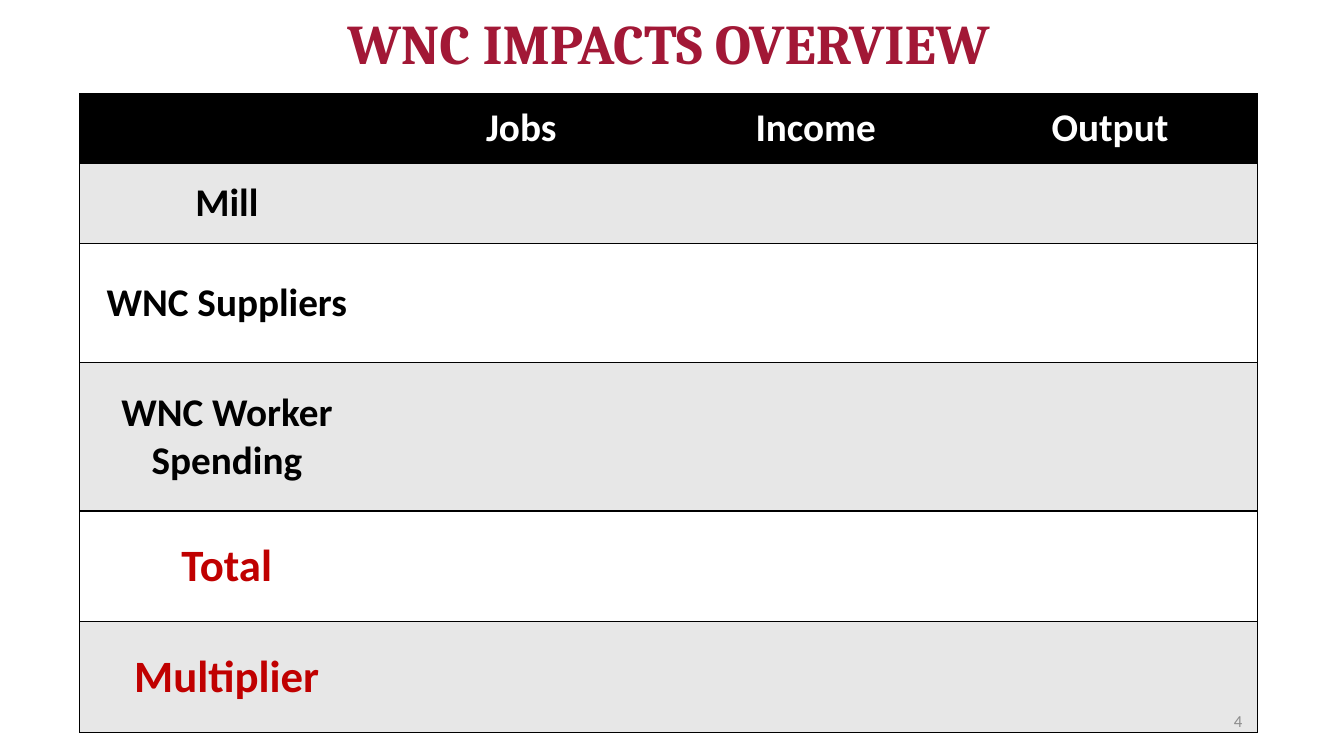
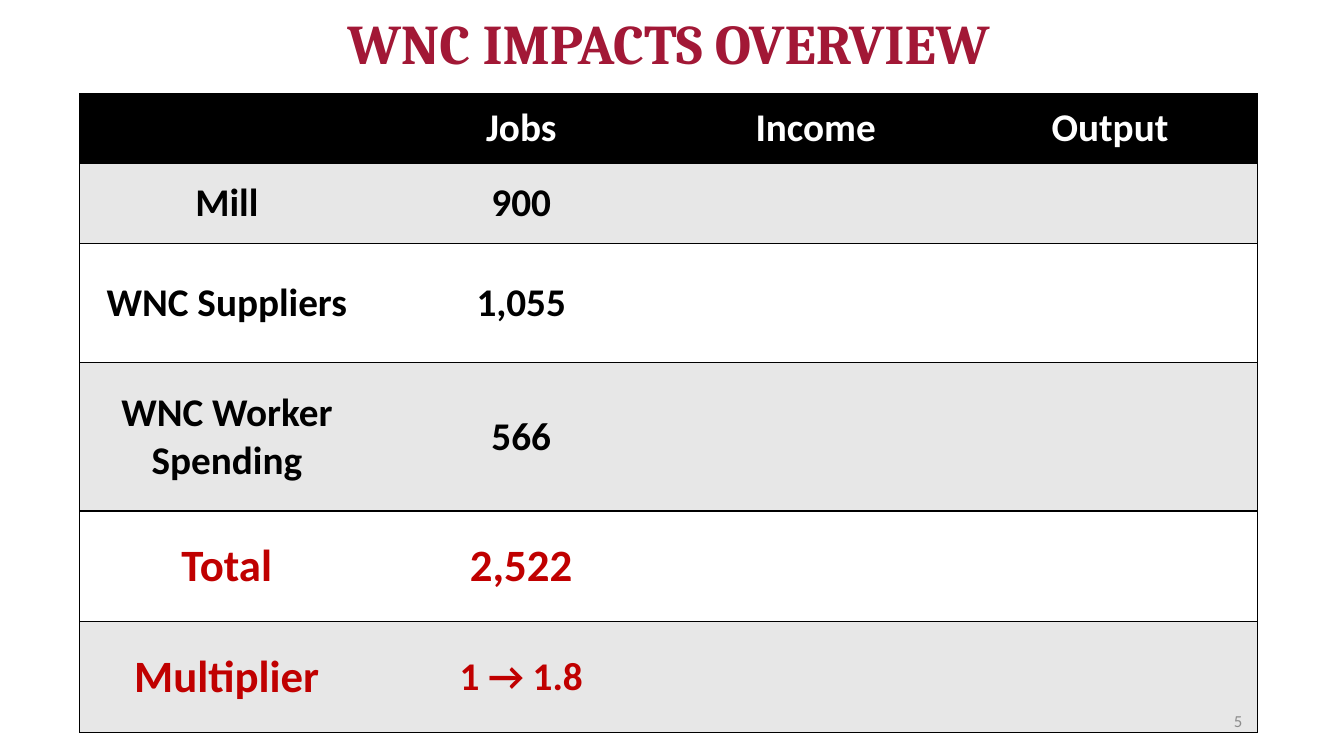
"""Build two slides that reveal a regional impact table step by step."""
from lxml import etree
from pptx import Presentation
from pptx.dml.color import RGBColor
from pptx.enum.text import MSO_ANCHOR, PP_ALIGN
from pptx.oxml.ns import qn

PX = 9144
CENTER, RIGHT = PP_ALIGN.CENTER, PP_ALIGN.RIGHT
TOP, MIDDLE = MSO_ANCHOR.TOP, MSO_ANCHOR.MIDDLE

COLORS = {
    "title": "A21836",
    "header": "000000",
    "header_text": "FFFFFF",
    "band": "E7E7E7",
    "plain": "FFFFFF",
    "text": "000000",
    "accent": "C00000",
    "border": "000000",
    "number": "8C8C8C",
}
BODY_FONT, TITLE_FONT = "Calibri", "Cambria"
TITLE = "WNC IMPACTS OVERVIEW"
HEADERS = ["", "Jobs", "Income", "Output"]
LABELS = ["Mill", "WNC Suppliers", "WNC Worker\nSpending", "Total", "Multiplier"]
JOBS = ["900", "1,055", "566", "2,522", "1 → 1.8"]
SUMMARY_LABELS = {"Total", "Multiplier"}
ROW_HEIGHTS = [69, 80, 118, 147, 110, 110]
COL_WIDTH = 292


def write_text(tf, text, size=28, color="text", font=BODY_FONT, bold=True, align=CENTER):
    p = tf.paragraphs[0]
    p.alignment = align
    for i, line in enumerate(text.split("\n")):
        if i:
            p.add_line_break()
        r = p.add_run()
        r.text = line
        r.font.name = font
        r.font.size = size * 12700
        r.font.bold = bold
        r.font.color.rgb = RGBColor.from_string(COLORS[color])


def add_text(slide, x, y, w, h, text, anchor=TOP, **fmt):
    tf = slide.shapes.add_textbox(x * PX, y * PX, w * PX, h * PX).text_frame
    tf.word_wrap = True
    tf.vertical_anchor = anchor
    write_text(tf, text, **fmt)


def set_borders(cell, visible):
    tc_pr = cell._tc.get_or_add_tcPr()
    for side in "LRTB":
        ln = etree.SubElement(tc_pr, qn(f"a:ln{side}"), w="12700")
        if side in visible:
            fill = etree.SubElement(ln, qn("a:solidFill"))
            etree.SubElement(fill, qn("a:srgbClr"), val=COLORS["border"])
        else:
            etree.SubElement(ln, qn("a:noFill"))


def format_cell(cell, text, fill, borders, **fmt):
    set_borders(cell, borders)
    cell.fill.solid()
    cell.fill.fore_color.rgb = RGBColor.from_string(COLORS[fill])
    cell.vertical_anchor = MIDDLE
    if text:
        write_text(cell.text_frame, text, **fmt)


def add_impact_table(slide, jobs):
    rows = [HEADERS] + [[label, job, "", ""] for label, job in zip(LABELS, jobs)]
    n_cols = len(HEADERS)
    table = slide.shapes.add_table(
        len(rows), n_cols, 79 * PX, 93 * PX,
        n_cols * COL_WIDTH * PX, sum(ROW_HEIGHTS) * PX).table
    table.horz_banding = False
    for col in table.columns:
        col.width = COL_WIDTH * PX
    for i, values in enumerate(rows):
        table.rows[i].height = ROW_HEIGHTS[i] * PX
        summary = values[0] in SUMMARY_LABELS
        if i == 0:
            fill, color = "header", "header_text"
        else:
            fill = "band" if i % 2 else "plain"
            color = "accent" if summary else "text"
        for j, text in enumerate(values):
            borders = "TB" + {0: "L", n_cols - 1: "R"}.get(j, "")
            size = 32 if summary and "→" not in text else 28
            format_cell(table.cell(i, j), text, fill, borders, size=size, color=color)


def add_impact_slide(prs, number, jobs):
    slide = prs.slides.add_slide(prs.slide_layouts[6])
    add_text(slide, 0, 4, 1326, 77, TITLE, size=40, color="title", font=TITLE_FONT)
    add_impact_table(slide, jobs)
    add_text(slide, 942, 695, 300, 40, str(number), anchor=MIDDLE,
             size=12, color="number", bold=False, align=RIGHT)


def main():
    prs = Presentation()
    prs.slide_width, prs.slide_height = 1333 * PX, 750 * PX
    add_impact_slide(prs, 4, [""] * len(LABELS))
    add_impact_slide(prs, 5, JOBS)
    prs.save("out.pptx")


if __name__ == "__main__":
    main()
